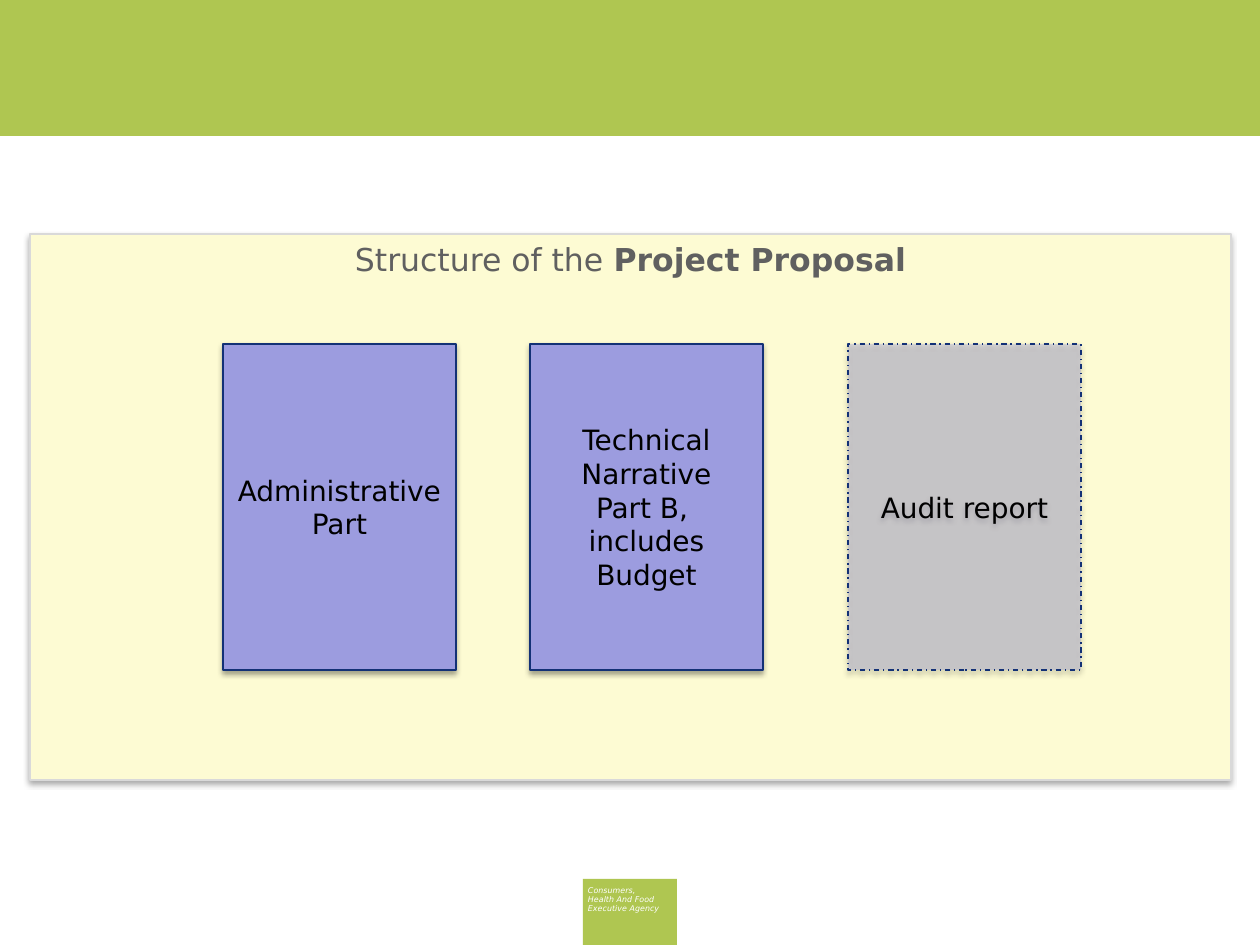
from lxml import etree
from pptx import Presentation
from pptx import util as u
from pptx.dml.color import RGBColor
from pptx.enum import dml, shapes, text
from pptx.oxml.ns import qn

PX = u.Inches(1) // 126
FONT = "DejaVu Sans"
COLORS = {
    "green": "AFC651", "cream": "FDFBD3", "lilac": "9C9CDF", "navy": "133176",
    "edge": "D9D9D9", "grey": "606060", "black": "000000", "white": "FFFFFF",
}
SHADOW = {"blur": u.Pt(3.1), "dist": u.Pt(1.8), "angle": 90, "alpha": 35}

# Each paragraph is a list of (text, bold) runs.
HEADING = [[("Structure of the ", False), ("Project Proposal", True)]]
AGENCY = ["Consumers,", "Health And Food", "Executive Agency"]
PART_TOP, PART_W, PART_H = 344, 233, 326
PARTS = [  # left, lines, optional
    (223, ["Administrative", "Part"], False),
    (530, ["Technical Narrative", "Part B, ", "includes Budget"], False),
    (848, ["Audit report"], True),
]


def rgb(name):
    return RGBColor.from_string(COLORS[name])


def plain(lines):
    return [[(line, False)] for line in lines]


def add_alpha(color, percent):
    etree.SubElement(color, qn("a:alpha"), val=str(percent * 1000))


def add_box(s, x, y, w, h, fill, line=None):
    sp = s.shapes.add_shape(shapes.MSO_SHAPE.RECTANGLE,
                            *(v * PX for v in (x, y, w, h)))
    sp.shadow.inherit = False
    sp.fill.solid()
    sp.fill.fore_color.rgb = rgb(fill)
    if line:
        sp.line.color.rgb = rgb(line)
        sp.line.width = u.Pt(0.75)
    else:
        sp.line.fill.background()
    return sp


def add_shadow(sp):
    effects = sp.element.spPr.find(qn("a:effectLst"))
    outer = etree.SubElement(
        effects, qn("a:outerShdw"), blurRad=str(SHADOW["blur"]),
        dist=str(SHADOW["dist"]), dir=str(SHADOW["angle"] * 60000),
        rotWithShape="0")
    color = etree.SubElement(outer, qn("a:srgbClr"), val=COLORS["black"])
    add_alpha(color, SHADOW["alpha"])


def write(sp, paragraphs, size, color, align=text.PP_ALIGN.CENTER,
          anchor=text.MSO_ANCHOR.MIDDLE, italic=False):
    tf = sp.text_frame
    tf.word_wrap = True
    tf.vertical_anchor = anchor
    for i, runs in enumerate(paragraphs):
        p = tf.add_paragraph() if i else tf.paragraphs[0]
        p.alignment = align
        for words, bold in runs:
            r = p.add_run()
            r.text = words
            r.font.name = FONT
            r.font.size = u.Pt(size)
            r.font.bold = bold
            r.font.italic = italic
            r.font.color.rgb = rgb(color)


def main():
    prs = Presentation()
    prs.slide_width, prs.slide_height = 1260 * PX, 945 * PX
    s = prs.slides.add_slide(prs.slide_layouts[6])

    add_box(s, 0, 0, 1260, 136, "green")
    agency = add_box(s, 583, 879, 94, 66, "green")
    agency.text_frame.margin_left = 5 * PX
    write(agency, plain(AGENCY), 4.5, "white", text.PP_ALIGN.LEFT,
          text.MSO_ANCHOR.TOP, italic=True)

    panel = add_box(s, 30, 234, 1201, 546, "cream", "edge")
    add_shadow(panel)
    write(panel, HEADING, 18, "grey", anchor=text.MSO_ANCHOR.TOP)

    for left, lines, optional in PARTS:
        part = add_box(s, left, PART_TOP, PART_W, PART_H, "lilac", "navy")
        add_shadow(part)
        if optional:
            part.line.dash_style = dml.MSO_LINE.DASH_DOT
            fill = part.element.spPr.find(qn("a:solidFill"))
            add_alpha(fill.find(qn("a:srgbClr")), 36)
        write(part, plain(lines), 16, "black")

    prs.save("out.pptx")


if __name__ == "__main__":
    main()
